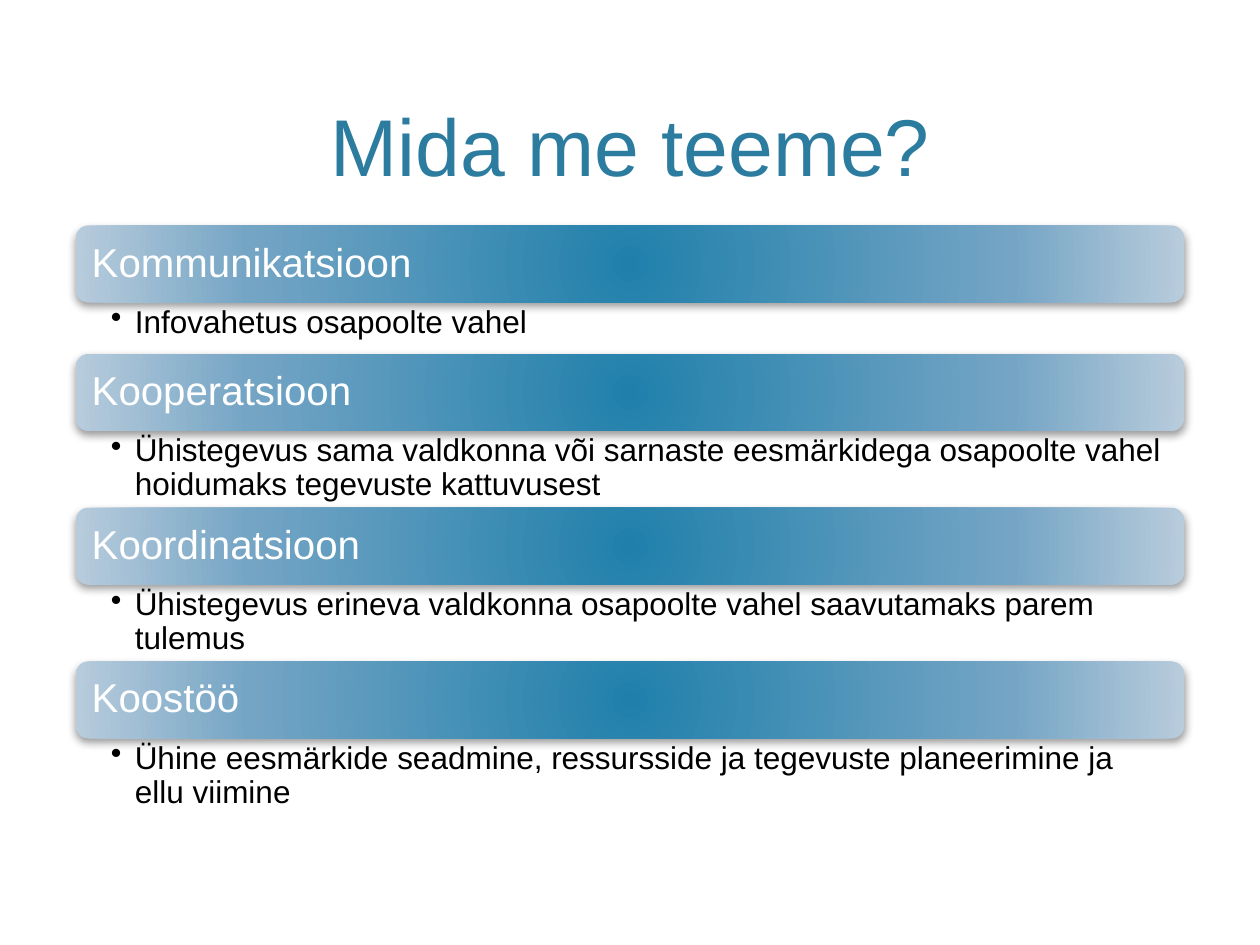
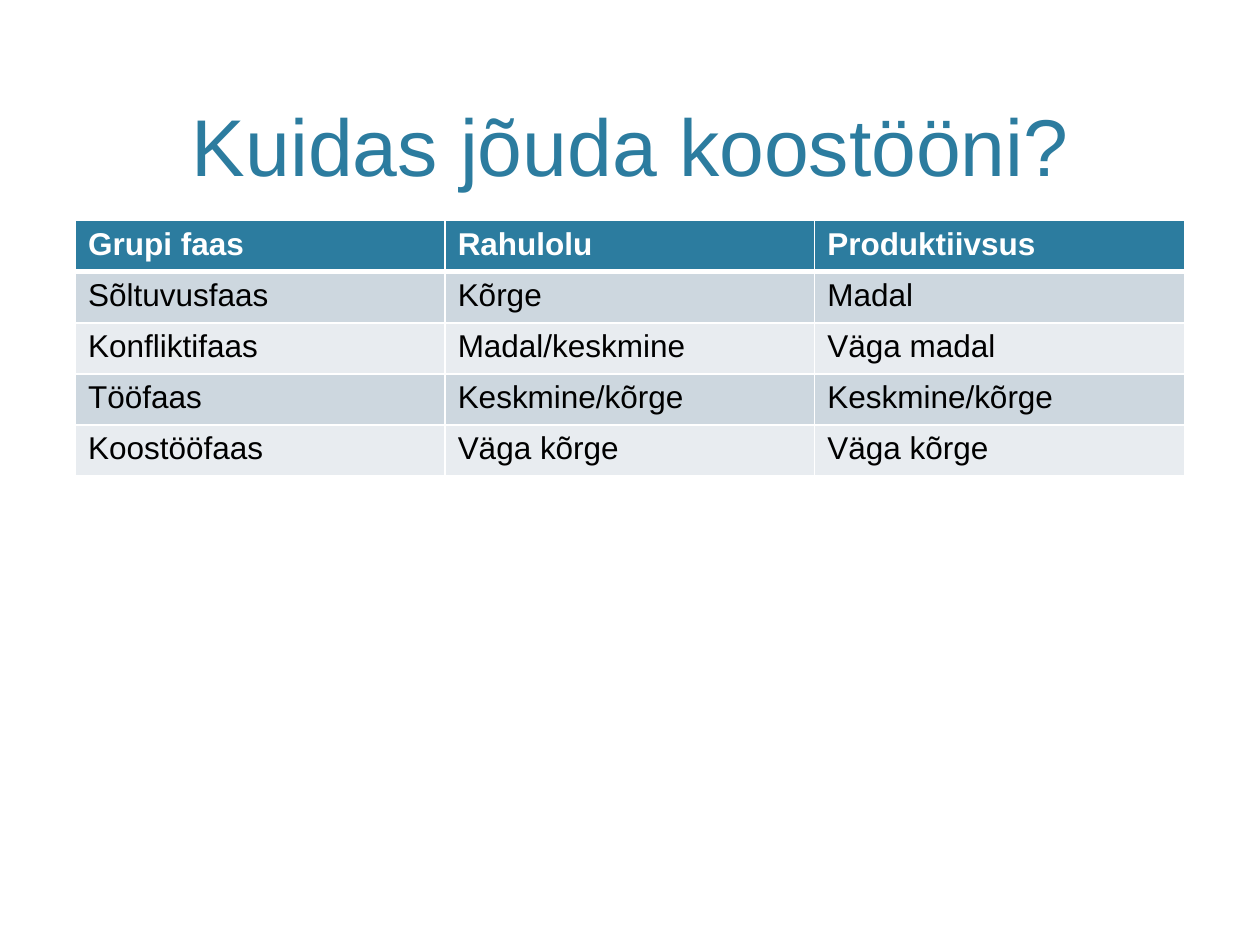
from pptx import Presentation
from pptx.dml.color import RGBColor
from pptx.enum.text import MSO_ANCHOR, MSO_AUTO_SIZE, PP_ALIGN
from pptx.enum.shapes import MSO_SHAPE
from pptx.oxml import parse_xml
from pptx.oxml.ns import nsdecls
from pptx.util import Inches, Pt

FONT = "Arial"
COLORS = {
    "accent": "2C7C9F",
    "band_centre": "2080AB",
    "band_middle": "75A5C5",
    "band_edge": "B8CCDC",
    "row_dark": "CDD7DF",
    "row_light": "E8ECF0",
    "text": "000000",
    "white": "FFFFFF",
}
LEFT, WIDTH = 0.6, 8.8
BAND_HEIGHT = 0.61
BAND_STOPS = [(0, "band_centre"), (69, "band_middle"), (100, "band_edge")]

ACTIVITIES = [
    ("Kommunikatsioon", "Infovahetus osapoolte vahel", 0.41),
    ("Kooperatsioon", "Ühistegevus sama valdkonna või sarnaste eesmärkidega "
     "osapoolte vahel hoidumaks tegevuste kattuvusest", 0.61),
    ("Koordinatsioon", "Ühistegevus erineva valdkonna osapoolte vahel "
     "saavutamaks parem tulemus", 0.61),
    ("Koostöö", "Ühine eesmärkide seadmine, ressursside ja tegevuste "
     "planeerimine ja ellu viimine", 0.61),
]
PHASES = [
    ("Grupi faas", "Rahulolu", "Produktiivsus"),
    ("Sõltuvusfaas", "Kõrge", "Madal"),
    ("Konfliktifaas", "Madal/keskmine", "Väga madal"),
    ("Tööfaas", "Keskmine/kõrge", "Keskmine/kõrge"),
    ("Koostööfaas", "Väga kõrge", "Väga kõrge"),
]


def rgb(name):
    return RGBColor.from_string(COLORS[name])


def add_run(paragraph, text, size, color, bold=False):
    run = paragraph.add_run()
    run.text = text
    run.font.name = FONT
    run.font.size = Pt(size)
    run.font.bold = bold
    run.font.color.rgb = rgb(color)


def set_margins(frame, left, top, right, bottom):
    frame.margin_left, frame.margin_top = Inches(left), Inches(top)
    frame.margin_right, frame.margin_bottom = Inches(right), Inches(bottom)


def add_titled_slide(deck, heading):
    slide = deck.slides.add_slide(deck.slide_layouts.get_by_name("Title Only"))
    title = slide.shapes.title
    title.left, title.top = Inches(LEFT), Inches(0.12)
    title.width, title.height = Inches(WIDTH), Inches(1.46)
    frame = title.text_frame
    frame.auto_size = MSO_AUTO_SIZE.NONE
    frame.vertical_anchor = MSO_ANCHOR.BOTTOM
    frame.paragraphs[0].alignment = PP_ALIGN.CENTER
    add_run(frame.paragraphs[0], heading, 46, "accent")
    return slide


def radial_fill():
    stops = "".join(
        f'<a:gs pos="{percent * 1000}"><a:srgbClr val="{COLORS[name]}"/></a:gs>'
        for percent, name in BAND_STOPS
    )
    return parse_xml(
        f'<a:gradFill {nsdecls("a")} rotWithShape="1"><a:gsLst>{stops}</a:gsLst>'
        '<a:path path="circle"><a:fillToRect l="100000" t="100000" '
        'r="100000" b="100000"/></a:path></a:gradFill>'
    )


def soft_shadow():
    return parse_xml(
        f'<a:outerShdw {nsdecls("a")} blurRad="{Pt(5)}" dist="{Pt(2)}" '
        'dir="5400000" rotWithShape="0"><a:srgbClr val="000000">'
        '<a:alpha val="40000"/></a:srgbClr></a:outerShdw>'
    )


def add_band(slide, top, activity):
    band = slide.shapes.add_shape(
        MSO_SHAPE.ROUNDED_RECTANGLE,
        Inches(LEFT), Inches(top), Inches(WIDTH), Inches(BAND_HEIGHT),
    )
    band.line.fill.background()
    band.shadow.inherit = False
    properties = band.element.spPr
    properties.insert(2, radial_fill())
    properties.find("{*}effectLst").append(soft_shadow())
    frame = band.text_frame
    frame.vertical_anchor = MSO_ANCHOR.MIDDLE
    set_margins(frame, 0.1, 0.1, 0.1, 0.1)
    paragraph = frame.paragraphs[0]
    paragraph.alignment = PP_ALIGN.LEFT
    paragraph.line_spacing = 0.9
    add_run(paragraph, activity, 23, "white")


def add_explanation(slide, top, height, explanation):
    box = slide.shapes.add_textbox(
        Inches(LEFT), Inches(top), Inches(WIDTH), Inches(height)
    )
    frame = box.text_frame
    frame.word_wrap = True
    set_margins(frame, 0.28, 0.03, 0.18, 0.03)
    paragraph = frame.paragraphs[0]
    paragraph.line_spacing = 0.9
    indent = paragraph._p.get_or_add_pPr()
    indent.set("marL", str(Inches(0.19)))
    indent.set("indent", str(-Inches(0.19)))
    indent.append(parse_xml(f'<a:buChar {nsdecls("a")} char="•"/>'))
    add_run(paragraph, explanation, 18, "text")


def set_borders(cell, widths):
    properties = cell._tc.get_or_add_tcPr()
    for side, width in widths.items():
        properties.append(parse_xml(
            f'<a:ln{side} {nsdecls("a")} w="{Pt(width)}"><a:solidFill>'
            f'<a:srgbClr val="{COLORS["white"]}"/></a:solidFill></a:ln{side}>'
        ))


def add_phase_table(slide):
    table = slide.shapes.add_table(
        len(PHASES), len(PHASES[0]),
        Inches(LEFT), Inches(1.75), Inches(WIDTH), Inches(2.03),
    ).table
    for row, phase in enumerate(PHASES):
        is_header = row == 0
        fill = "accent" if is_header else "row_dark" if row % 2 else "row_light"
        borders = {"L": 1, "R": 1, "T": 3 if row == 1 else 1, "B": 3 if is_header else 1}
        for column, entry in enumerate(phase):
            cell = table.cell(row, column)
            set_borders(cell, borders)
            cell.fill.solid()
            cell.fill.fore_color.rgb = rgb(fill)
            add_run(cell.text_frame.paragraphs[0], entry, 18,
                    "white" if is_header else "text", is_header)


def main():
    deck = Presentation()
    deck.slide_width, deck.slide_height = Inches(10), Inches(7.5)

    activities = add_titled_slide(deck, "Mida me teeme?")
    top = 1.79
    for activity, explanation, height in ACTIVITIES:
        add_band(activities, top, activity)
        add_explanation(activities, top + BAND_HEIGHT, height, explanation)
        top += BAND_HEIGHT + height

    add_phase_table(add_titled_slide(deck, "Kuidas jõuda koostööni?"))
    deck.save("out.pptx")


if __name__ == "__main__":
    main()
